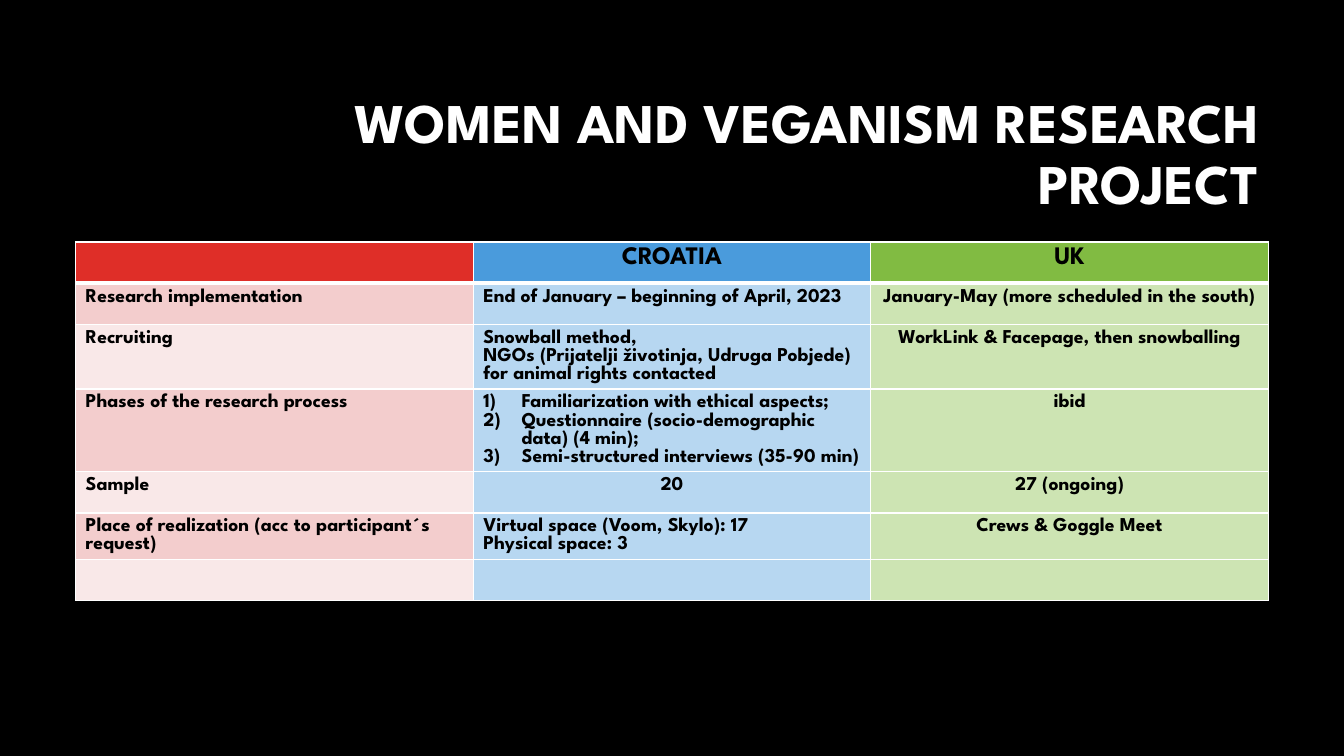
from dataclasses import dataclass

from lxml.etree import SubElement
from pptx import Presentation
from pptx.dml.color import RGBColor
from pptx.enum.text import MSO_ANCHOR, PP_ALIGN
from pptx.oxml.ns import qn
from pptx.util import Inches, Pt


@dataclass(frozen=True)
class Theme:
    font: str = "League Spartan"
    background: str = "000000"
    light: str = "FFFFFF"
    dark: str = "000000"
    header_fills: tuple = ("DF2E28", "4A9BDC", "81BB42")
    body_fills: tuple = ("B7D7F1", "CDE4B3")
    label_fills: tuple = ("F3CDCD", "F9E8E8")
    title_size: int = 40
    header_size: int = 18
    body_size: int = 14


@dataclass(frozen=True)
class Entry:
    lines: tuple = ()
    centred: bool = False
    numbered: bool = False


@dataclass(frozen=True)
class Topic:
    label: str
    croatia: Entry
    uk: str


THEME = Theme()
TOPICS = (
    Topic("Research implementation",
          Entry(("End of January – beginning of April, 2023",)),
          "January-May (more scheduled in the south)"),
    Topic("Recruiting",
          Entry(("Snowball method,",
                 "NGOs (Prijatelji životinja, Udruga Pobjede) for animal rights contacted")),
          "WorkLink & Facepage, then snowballing"),
    Topic("Phases of the research process",
          Entry(("Familiarization with ethical aspects;",
                 "Questionnaire (socio-demographic data) (4 min);",
                 "Semi-structured interviews (35-90 min)"), numbered=True),
          "ibid"),
    Topic("Sample", Entry(("20",), centred=True), "27 (ongoing)"),
    Topic("Place of realization (acc to participant´s request)",
          Entry(("Virtual space (Voom, Skylo): 17", "Physical space: 3")),
          "Crews & Goggle Meet"),
    Topic("", Entry(), ""),
)


def colour(value: str) -> RGBColor:
    return RGBColor.from_string(value)


def number_paragraph(para) -> None:
    properties = para._p.get_or_add_pPr()
    properties.set("marL", str(Inches(0.38)))
    properties.set("indent", str(-Inches(0.38)))
    SubElement(properties, qn("a:buFont"), typeface="+mj-lt")
    SubElement(properties, qn("a:buAutoNum"), type="arabicParenR")


def write_text(frame, lines: tuple, *, size: int, ink: str, align=PP_ALIGN.LEFT,
               spacing: float | None = None, numbered: bool = False) -> None:
    for index, line in enumerate(lines):
        para = frame.add_paragraph() if index else frame.paragraphs[0]
        para.alignment = align
        if spacing:
            para.line_spacing = spacing
        if numbered:
            number_paragraph(para)
        span = para.add_run()
        span.text = line
        span.font.name = THEME.font
        span.font.size = Pt(size)
        span.font.bold = True
        span.font.color.rgb = colour(ink)


def set_borders(cell, bottom_width: int) -> None:
    properties = cell._tc.get_or_add_tcPr()
    widths = {"a:lnL": 1, "a:lnR": 1, "a:lnT": 1, "a:lnB": bottom_width}
    for position, (side, width) in enumerate(widths.items()):
        line = SubElement(properties, qn(side), w=str(Pt(width)))
        fill = SubElement(line, qn("a:solidFill"))
        SubElement(fill, qn("a:srgbClr"), val=THEME.light)
        properties.insert(position, line)


def fill_cell(cell, entry: Entry, fill: str, *, size: int, bottom_width: int = 1) -> None:
    cell.fill.solid()
    cell.fill.fore_color.rgb = colour(fill)
    set_borders(cell, bottom_width)
    write_text(cell.text_frame, entry.lines, size=size, ink=THEME.dark,
               align=PP_ALIGN.CENTER if entry.centred else PP_ALIGN.LEFT,
               numbered=entry.numbered)


def add_title(page, text: str) -> None:
    box = page.shapes.title
    box.left, box.top = Inches(3.17), Inches(0.84)
    box.width, box.height = Inches(9.42), Inches(1.41)
    box.text_frame.word_wrap = True
    box.text_frame.vertical_anchor = MSO_ANCHOR.MIDDLE
    write_text(box.text_frame, (text,), size=THEME.title_size, ink=THEME.light,
               align=PP_ALIGN.RIGHT, spacing=0.9)


def add_comparison(page) -> None:
    row_count = len(TOPICS) + 1
    row_height = Inches(0.41)
    table = page.shapes.add_table(row_count, 3, Inches(0.75), Inches(2.4),
                                  Inches(11.83), row_height * row_count).table
    for row in table.rows:
        row.height = row_height
    for column, heading in enumerate(("", "CROATIA", "UK")):
        entry = Entry((heading,), centred=True) if heading else Entry()
        fill_cell(table.cell(0, column), entry, THEME.header_fills[column],
                  size=THEME.header_size, bottom_width=3)
    for index, topic in enumerate(TOPICS):
        label = Entry((topic.label,)) if topic.label else Entry()
        uk = Entry((topic.uk,), centred=True) if topic.uk else Entry()
        fills = (THEME.label_fills[index % 2], *THEME.body_fills)
        for column, entry in enumerate((label, topic.croatia, uk)):
            fill_cell(table.cell(index + 1, column), entry, fills[column],
                      size=THEME.body_size)


def main() -> None:
    deck = Presentation()
    deck.slide_width, deck.slide_height = Inches(13.33), Inches(7.5)
    page = deck.slides.add_slide(deck.slide_layouts[5])
    page.background.fill.solid()
    page.background.fill.fore_color.rgb = colour(THEME.background)
    add_title(page, "WOMEN AND VEGANISM RESEARCH PROJECT")
    add_comparison(page)
    deck.save("out.pptx")


if __name__ == "__main__":
    main()
